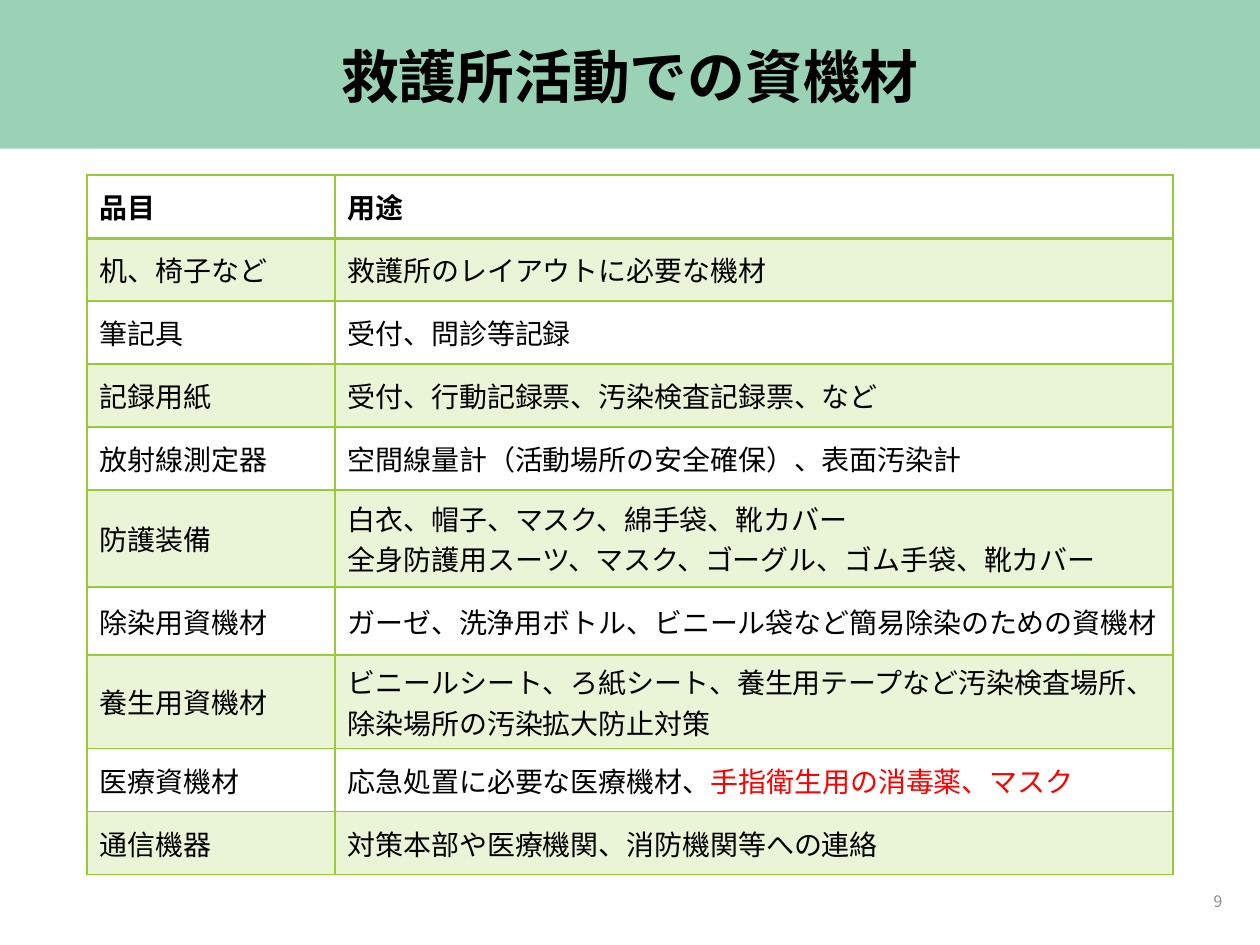
from lxml.etree import SubElement
from pptx import Presentation
from pptx.dml.color import RGBColor
from pptx.enum.shapes import MSO_SHAPE
from pptx.enum.text import MSO_ANCHOR, PP_ALIGN
from pptx.oxml.ns import qn
from pptx.util import Inches, Pt

BLACK = RGBColor(0, 0, 0)
RED = RGBColor(255, 0, 0)
GRAY = RGBColor(0x8C, 0x8C, 0x8C)
GREEN = RGBColor(0x37, 0xA7, 0x6F)
LIME = RGBColor(0x99, 0xCB, 0x38)
FONT = "Noto Sans CJK JP"
ROW = 6.67

ITEMS = [
    ("品目", [["用途"]], ROW),
    ("机、椅子など", [["救護所のレイアウトに必要な機材"]], ROW),
    ("筆記具", [["受付、問診等記録"]], ROW),
    ("記録用紙", [["受付、行動記録票、汚染検査記録票、など"]], ROW),
    ("放射線測定器", [["空間線量計（活動場所の安全確保）、表面汚染計"]], ROW),
    ("防護装備", [["白衣、帽子、マスク、綿手袋、靴カバー"],
              ["全身防護用スーツ、マスク、ゴーグル、ゴム手袋、靴カバー"]], 10.27),
    ("除染用資機材", [["ガーゼ、洗浄用ボトル、ビニール袋など簡易除染のための資機材"]], 7.2),
    ("養生用資機材", [["ビニールシート、ろ紙シート、養生用テープなど汚染検査場所、"
                "除染場所の汚染拡大防止対策"]], 9.87),
    ("医療資機材", [["応急処置に必要な医療機材、", ("手指衛生用の消毒薬、マスク", RED)]], ROW),
    ("通信機器", [["対策本部や医療機関、消防機関等への連絡"]], ROW),
]


class Deck:
    """Hold the slide and its style; lengths are percent of the slide's size."""

    def __init__(self):
        self.prs = Presentation()
        self.prs.slide_width, self.prs.slide_height = Inches(10), Inches(7.5)
        self.slide = self.prs.slides.add_slide(self.prs.slide_layouts[5])
        self.shapes = self.slide.shapes

    def wide(self, share):
        return round(self.prs.slide_width * share / 100)

    def high(self, share):
        return round(self.prs.slide_height * share / 100)

    def box(self, x, y, w, h):
        return self.wide(x), self.high(y), self.wide(w), self.high(h)

    def tint(self, fill, root, color, alpha):
        fill.solid()
        fill.fore_color.rgb = color
        node = root.find(qn("a:solidFill")).find(qn("a:srgbClr"))
        SubElement(node, qn("a:alpha"), val=str(alpha * 1000))

    def text(self, frame, lines, size, color=BLACK, bold=False, align=PP_ALIGN.LEFT):
        frame.word_wrap = True
        for i, line in enumerate(lines):
            para = frame.add_paragraph() if i else frame.paragraphs[0]
            para.alignment = align
            for part in line:
                words, tone = (part, color) if isinstance(part, str) else part
                run = para.add_run()
                run.text = words
                run.font.size, run.font.bold = Pt(size), bold
                run.font.name = FONT
                run.font.color.rgb = tone
                SubElement(run.font._element, qn("a:ea"), typeface=FONT)

    def band(self, *place):
        shape = self.shapes.add_shape(MSO_SHAPE.RECTANGLE, *self.box(*place))
        shape.shadow.inherit = False
        shape.line.fill.background()
        self.tint(shape.fill, shape._element.spPr, GREEN, 50)
        self.shapes._spTree.insert(2, shape._element)

    def title(self, words, *place):
        head = self.shapes.title
        head.left, head.top, head.width, head.height = self.box(*place)
        frame = head.text_frame
        frame.vertical_anchor = MSO_ANCHOR.MIDDLE
        self.text(frame, [[words]], 33, bold=True, align=PP_ALIGN.CENTER)
        frame.paragraphs[0].line_spacing = 0.9

    def edge(self, cell, thick):
        props = cell._tc.get_or_add_tcPr()
        for side, width in (("L", 1), ("R", 1), ("T", 1), ("B", thick)):
            line = SubElement(props, qn(f"a:ln{side}"), w=str(Pt(width)))
            fill = SubElement(line, qn("a:solidFill"))
            SubElement(fill, qn("a:srgbClr"), val=str(LIME))

    def table(self, items, cols, x, y):
        tall = sum(item[2] for item in items)
        place = self.box(x, y, sum(cols), tall)
        grid = self.shapes.add_table(len(items), len(cols), *place).table
        grid.horz_banding = False
        for col, width in zip(grid.columns, cols):
            col.width = self.wide(width)
        for i, (name, lines, height) in enumerate(items):
            grid.rows[i].height = self.high(height)
            for j, words in enumerate(([[name]], lines)):
                cell = grid.cell(i, j)
                cell.vertical_anchor = MSO_ANCHOR.MIDDLE
                self.edge(cell, 1 if i else 2)
                if i % 2:
                    self.tint(cell.fill, cell._tc.tcPr, LIME, 20)
                else:
                    cell.fill.background()
                self.text(cell.text_frame, words, 16, bold=i == 0)

    def number(self, words, *place):
        frame = self.shapes.add_textbox(*self.box(*place)).text_frame
        frame.vertical_anchor = MSO_ANCHOR.MIDDLE
        self.text(frame, [[words]], 9, GRAY, align=PP_ALIGN.RIGHT)


def main():
    deck = Deck()
    deck.band(0, 0, 100, 15.73)
    deck.title("救護所活動での資機材", 6.9, 2.8, 86.2, 11.33)
    deck.table(ITEMS, (19.7, 66.5), 6.9, 18.53)
    deck.number("9", 75.5, 92.67, 22.5, 5.33)
    deck.prs.save("out.pptx")


if __name__ == "__main__":
    main()
